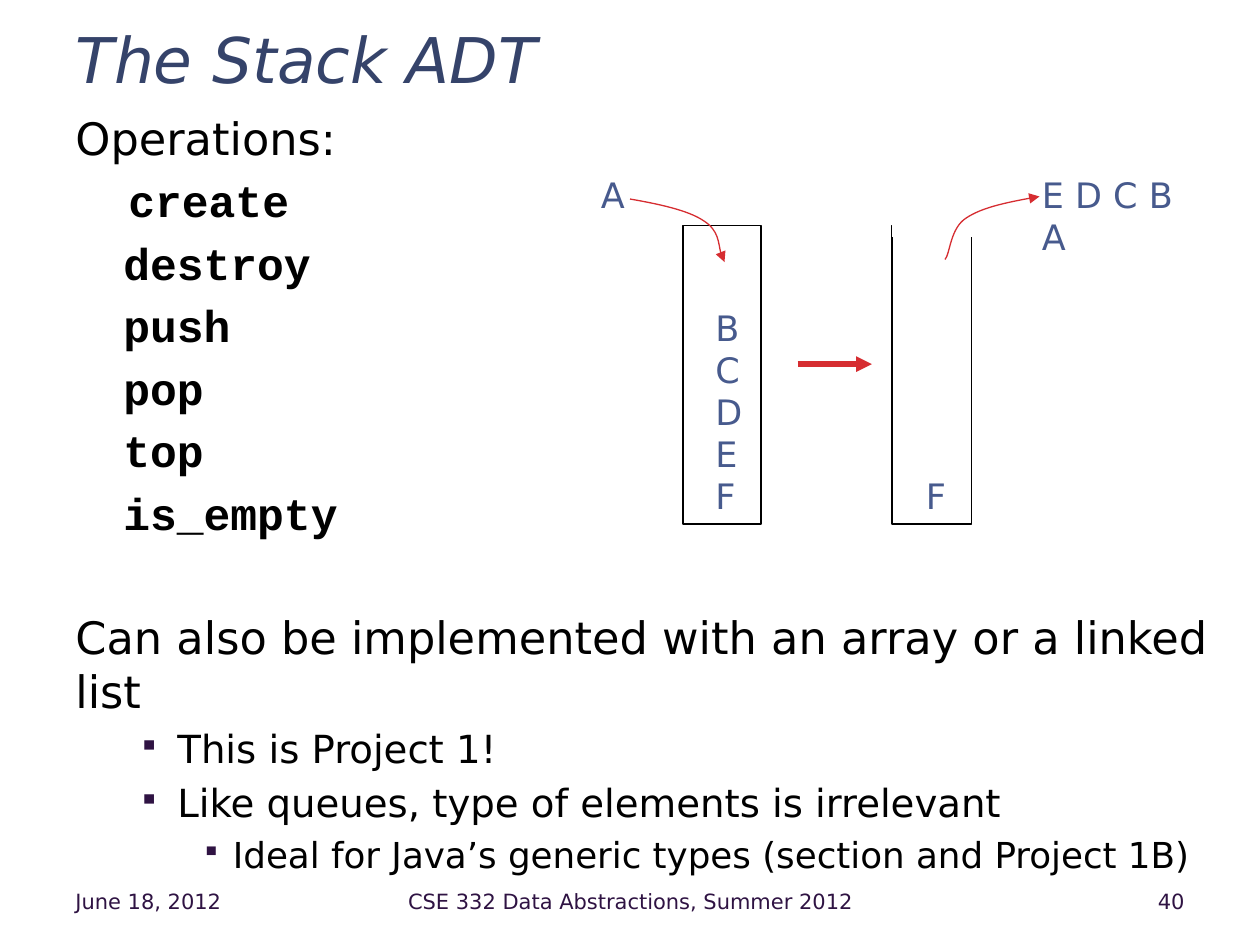
from pptx import Presentation
from pptx.dml.color import RGBColor
from pptx.enum.shapes import MSO_CONNECTOR, MSO_SHAPE
from pptx.enum.text import MSO_ANCHOR, MSO_AUTO_SIZE, PP_ALIGN
from pptx.oxml.ns import qn
from pptx.util import Inches, Pt
from lxml import etree

RECT, STRAIGHT = MSO_SHAPE.RECTANGLE, MSO_CONNECTOR.STRAIGHT
TOP, MIDDLE = MSO_ANCHOR.TOP, MSO_ANCHOR.MIDDLE
LEFT, CENTER, RIGHT = PP_ALIGN.LEFT, PP_ALIGN.CENTER, PP_ALIGN.RIGHT

SANS, MONO = "DejaVu Sans", "Courier New"
BLACK, WHITE, NAVY, BLUE = "000000", "FFFFFF", "35436A", "475A8D"
PURPLE, RED = "2F1343", "D62D31"

# Content
TITLE = "The Stack ADT"
# style: font, size, bold, left margin, hanging indent, space before
STYLES = {
    "head": (SANS, 25.5, False, 0, 0, 0),
    "first": (MONO, 25.5, True, 0.42, 0, 5.1),
    "code": (MONO, 25.5, True, 0.38, 0, 5.1),
    "note": (SANS, 25.5, False, 0, 0, 40.5),
    "bullet": (SANS, 22.1, False, 0.81, 0.31, 4.4),
    "sub": (SANS, 20.4, False, 1.25, 0.25, 4.1),
}
BODY = [
    ("head", "Operations:"),
    ("first", "create"),
    ("code", "destroy"),
    ("code", "push"),
    ("code", "pop"),
    ("code", "top"),
    ("code", "is_empty"),
    ("note", "Can also be implemented with an array or a linked list"),
    ("bullet", "This is Project 1!"),
    ("bullet", "Like queues, type of elements is irrelevant"),
    ("sub", "Ideal for Java’s generic types (section and Project 1B)"),
]
LABELS = [  # left, top, width, height, lines
    (4.67, 1.33, 0.4, 0.44, ["A"]),
    (5.58, 2.38, 0.4, 1.78, list("BCDEF")),
    (8.17, 1.33, 1.45, 0.44, ["E D C B A"]),
    (7.25, 3.72, 0.39, 0.44, ["F"]),
]
FOOTER = [  # left, width, alignment, text
    (0.5, 1.58, LEFT, "June 18, 2012"),
    (1.92, 6.17, CENTER, "CSE 332 Data Abstractions, Summer 2012"),
    (8.58, 0.92, RIGHT, "40"),
]
# Push curve: start, then control, control, end for each segment
PUSH = [(5, 1.58), (5.23, 1.62), (5.46, 1.67), (5.58, 1.75),
        (5.71, 1.83), (5.71, 2.04), (5.75, 2.08)]
POP = [(13.25 - x, y - 0.02) for x, y in PUSH]  # mirrored

prs = Presentation()
prs.slide_width, prs.slide_height = Inches(10), Inches(7.5)
s = prs.slides.add_slide(prs.slide_layouts[5])


def rgb(color):
    return RGBColor.from_string(color)


def add_run(p, text, size, color, font=SANS, bold=False, italic=False):
    r = p.add_run()
    r.text = text
    f = r.font
    f.name, f.size, f.bold, f.italic = font, Pt(size), bold, italic
    f.color.rgb = rgb(color)


def place(sp, *box):
    sp.left, sp.top, sp.width, sp.height = map(Inches, box)


def text_box(box, anchor=TOP):
    tf = s.shapes.add_textbox(*map(Inches, box)).text_frame
    tf.word_wrap = True
    tf.vertical_anchor = anchor
    return tf


def paragraphs(tf, count):
    return [tf.paragraphs[0]] + [tf.add_paragraph() for _ in range(count - 1)]


def set_bullet(p, margin, hang):
    pPr = p._p.get_or_add_pPr()
    pPr.set("marL", str(Inches(margin)))
    pPr.set("indent", str(Inches(-hang)))
    if hang:
        clr = etree.SubElement(pPr, qn("a:buClr"))
        etree.SubElement(clr, qn("a:srgbClr"), val=PURPLE)
        etree.SubElement(pPr, qn("a:buSzPct"), val="75000")
        etree.SubElement(pPr, qn("a:buChar"), char="▪")


def add_rect(box, fill=None, line=None):
    sp = s.shapes.add_shape(RECT, *map(Inches, box))
    sp.shadow.inherit = False
    for part, color in ((sp.fill, fill), (sp.line.fill, line)):
        if color:
            part.solid()
            part.fore_color.rgb = rgb(color)
        else:
            part.background()
    if line:
        sp.line.width = Pt(0.75)


def style_arrow(sp, width, end="tailEnd"):
    sp.line.color.rgb = rgb(RED)
    sp.line.width = Pt(width)
    etree.SubElement(sp.line._get_or_add_ln(), qn("a:" + end), type="triangle")


def add_curve(points, end):
    pts = [(Inches(x), Inches(y)) for x, y in points]
    builder = s.shapes.build_freeform(*pts[0])
    builder.add_line_segments(pts[1:], close=False)
    sp = builder.convert_to_shape()
    sp.shadow.inherit = False
    sp.fill.background()
    style_arrow(sp, 0.75, end)
    # Turn each three line points into one cubic segment
    outline = next(sp._element.iter(qn("a:path")))
    lines = outline.findall(qn("a:lnTo"))
    for i in range(0, len(lines), 3):
        cubic = etree.SubElement(outline, qn("a:cubicBezTo"))
        for ln in lines[i:i + 3]:
            cubic.append(ln[0])
            outline.remove(ln)


# Title
title = s.shapes.title
place(title, 0.5, 0.17, 9.25, 0.53)
tf = title.text_frame
tf.auto_size = MSO_AUTO_SIZE.NONE
tf.vertical_anchor = MIDDLE
p = tf.paragraphs[0]
p.alignment, p.line_spacing = LEFT, 1.1
add_run(p, TITLE, 36, NAVY, italic=True)

# Body
tf = text_box((0.5, 0.83, 9.25, 6))
for p, (style, text) in zip(paragraphs(tf, len(BODY)), BODY):
    font, size, bold, margin, hang, before = STYLES[style]
    p.space_before = Pt(before)
    set_bullet(p, margin, hang)
    add_run(p, text, size, BLACK, font, bold)

# Stacks; the second is open at the top
add_rect((5.42, 1.79, 0.62, 2.37), line=BLACK)
add_rect((7.08, 1.79, 0.63, 2.37), line=BLACK)
add_rect((7.08, 1.75, 0.67, 0.13), fill=WHITE)
for *box, lines in LABELS:
    tf = text_box(box)
    for p, text in zip(paragraphs(tf, len(lines)), lines):
        add_run(p, text, 20, BLUE)

# Arrows
add_curve(PUSH, "tailEnd")
add_curve(POP, "headEnd")
arrow = s.shapes.add_connector(STRAIGHT, *map(Inches, (6.33, 2.89, 6.92, 2.89)))
style_arrow(arrow, 3)
etree.SubElement(arrow._element.spPr, qn("a:effectLst"))

# Footer
for left, width, align, text in FOOTER:
    p = text_box((left, 6.95, width, 0.4), MIDDLE).paragraphs[0]
    p.alignment = align
    add_run(p, text, 12, PURPLE)

prs.save("out.pptx")
